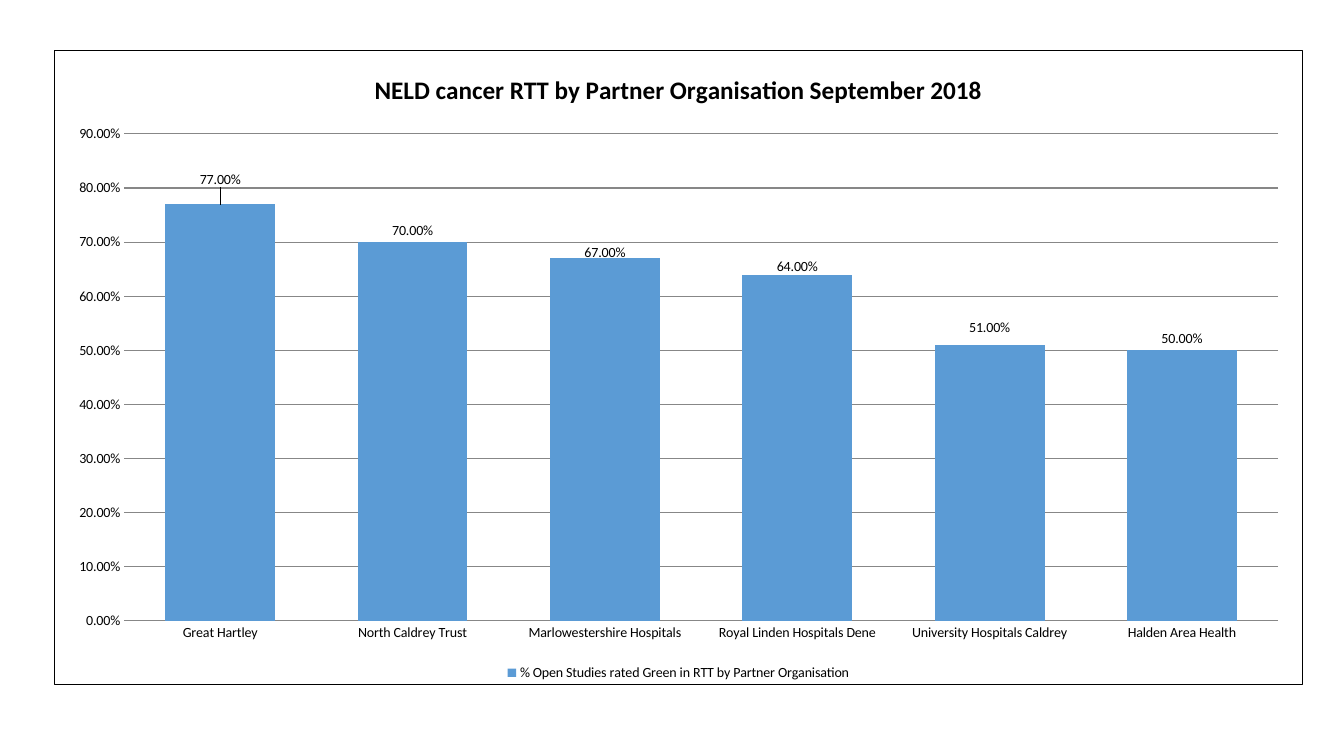
from lxml import etree
from pptx import Presentation
from pptx.chart.data import CategoryChartData
from pptx.dml.color import RGBColor
from pptx.enum.chart import XL_CHART_TYPE, XL_LABEL_POSITION, XL_LEGEND_POSITION, XL_TICK_MARK
from pptx.oxml.ns import qn
from pptx.util import Pt

COLUMNS = XL_CHART_TYPE.COLUMN_CLUSTERED
OUTSIDE = XL_LABEL_POSITION.OUTSIDE_END
BOTTOM = XL_LEGEND_POSITION.BOTTOM
NO_TICK = XL_TICK_MARK.NONE
C15 = "http://schemas.microsoft.com/office/drawing/2012/chart"
LABEL_EXT = "{CE6537A1-D6FC-4f65-9D91-7224C49458BB}"

# Content
TITLE = "NELD cancer RTT by Partner Organisation September 2018"
SERIES = "% Open Studies rated Green in RTT by Partner Organisation"
PERCENT = "0.00%"
PARTNERS = [
    ("Great Hartley", 0.77),
    ("North Caldrey Trust", 0.70),
    ("Marlowestershire Hospitals", 0.67),
    ("Royal Linden Hospitals Dene", 0.64),
    ("University Hospitals Caldrey", 0.51),
    ("Halden Area Health", 0.50),
]
# Places in points; label shifts are downward, by bar
LEFT, TOP, WIDTH, HEIGHT = 38.3, 35.4, 892.4, 454
PLOT_LEFT, PLOT_TOP, PLOT_WIDTH, PLOT_HEIGHT = 50, 60, 825, 348.5
LABEL_SHIFTS = {0: -9, 2: 4.5, 3: 3, 4: -4}
BLACK, GREY, BLUE = "000000", "878787", "5B9BD5"


def color(value):
    return RGBColor.from_string(value)


def set_font(font, **values):
    for name, value in values.items():
        setattr(font, name, value)
    font.color.rgb = color(BLACK)


def set_line(line, value):
    line.color.rgb = color(value)
    line.width = Pt(0.75)


def make_layout(values):
    layout = etree.Element(qn("c:layout"))
    manual = etree.SubElement(layout, qn("c:manualLayout"))
    for name, value in values.items():
        etree.SubElement(manual, qn("c:" + name)).set("val", str(value))
    return layout


prs = Presentation()
prs.slide_width, prs.slide_height = Pt(960), Pt(540)
s = prs.slides.add_slide(prs.slide_layouts[6])

# Chart
data = CategoryChartData(number_format=PERCENT)
data.categories = [name for name, _ in PARTNERS]
data.add_series(SERIES, [share for _, share in PARTNERS])
chart = s.shapes.add_chart(COLUMNS, Pt(LEFT), Pt(TOP), Pt(WIDTH), Pt(HEIGHT), data).chart
set_font(chart.font, name="Calibri", size=Pt(10))

# Title and legend
chart.has_title = True
tf = chart.chart_title.text_frame
tf.text = TITLE
set_font(tf.paragraphs[0].runs[0].font, name="Calibri", size=Pt(18), bold=True)
chart.has_legend = True
chart.legend.position = BOTTOM
chart.legend.include_in_layout = False

# Axes
for axis in (chart.category_axis, chart.value_axis):
    axis.major_tick_mark = axis.minor_tick_mark = NO_TICK
set_line(chart.category_axis.format.line, GREY)
axis = chart.value_axis
axis.minimum_scale, axis.maximum_scale, axis.major_unit = 0, 0.9, 0.1
axis.tick_labels.number_format = PERCENT
axis.tick_labels.number_format_is_linked = False
axis.format.line.fill.background()
axis.has_major_gridlines = True
set_line(axis.major_gridlines.format.line, GREY)

# Bars and labels
plot = chart.plots[0]
plot.gap_width, plot.overlap, plot.vary_by_categories = 75, -25, False
bars = plot.series[0]
bars.format.fill.solid()
bars.format.fill.fore_color.rgb = color(BLUE)
labels = bars.data_labels
for name, value in {"show_value": True, "number_format": PERCENT,
                    "number_format_is_linked": False, "position": OUTSIDE}.items():
    setattr(labels, name, value)
for i in LABEL_SHIFTS:
    bars.points[i].data_label.position = OUTSIDE

# Label shifts, without leader lines
space = chart.element
for idx in space.iter(qn("c:idx")):
    if idx.getparent().tag == qn("c:dLbl"):
        shift = LABEL_SHIFTS[int(idx.get("val"))]
        idx.addnext(make_layout({"x": 0, "y": shift / HEIGHT}))
ext_list = etree.SubElement(space.find(".//" + qn("c:ser") + "/" + qn("c:dLbls")), qn("c:extLst"))
ext = etree.SubElement(ext_list, qn("c:ext"), uri=LABEL_EXT)
etree.SubElement(ext, "{%s}showLeaderLines" % C15, nsmap={"c15": C15}).set("val", "0")

# Plot area
area = space.find(".//" + qn("c:plotArea"))
for old in area.findall(qn("c:layout")):
    area.remove(old)
area.insert(0, make_layout({
    "layoutTarget": "inner", "xMode": "edge", "yMode": "edge",
    "x": PLOT_LEFT / WIDTH, "y": PLOT_TOP / HEIGHT,
    "w": PLOT_WIDTH / WIDTH, "h": PLOT_HEIGHT / HEIGHT}))

# Chart frame
frame = etree.Element(qn("c:spPr"))
etree.SubElement(frame, qn("a:noFill"))
line = etree.SubElement(frame, qn("a:ln"), w=str(Pt(0.75)))
fill = etree.SubElement(line, qn("a:solidFill"))
etree.SubElement(fill, qn("a:srgbClr"), val=BLACK)
space.find(qn("c:chart")).addnext(frame)

prs.save("out.pptx")
